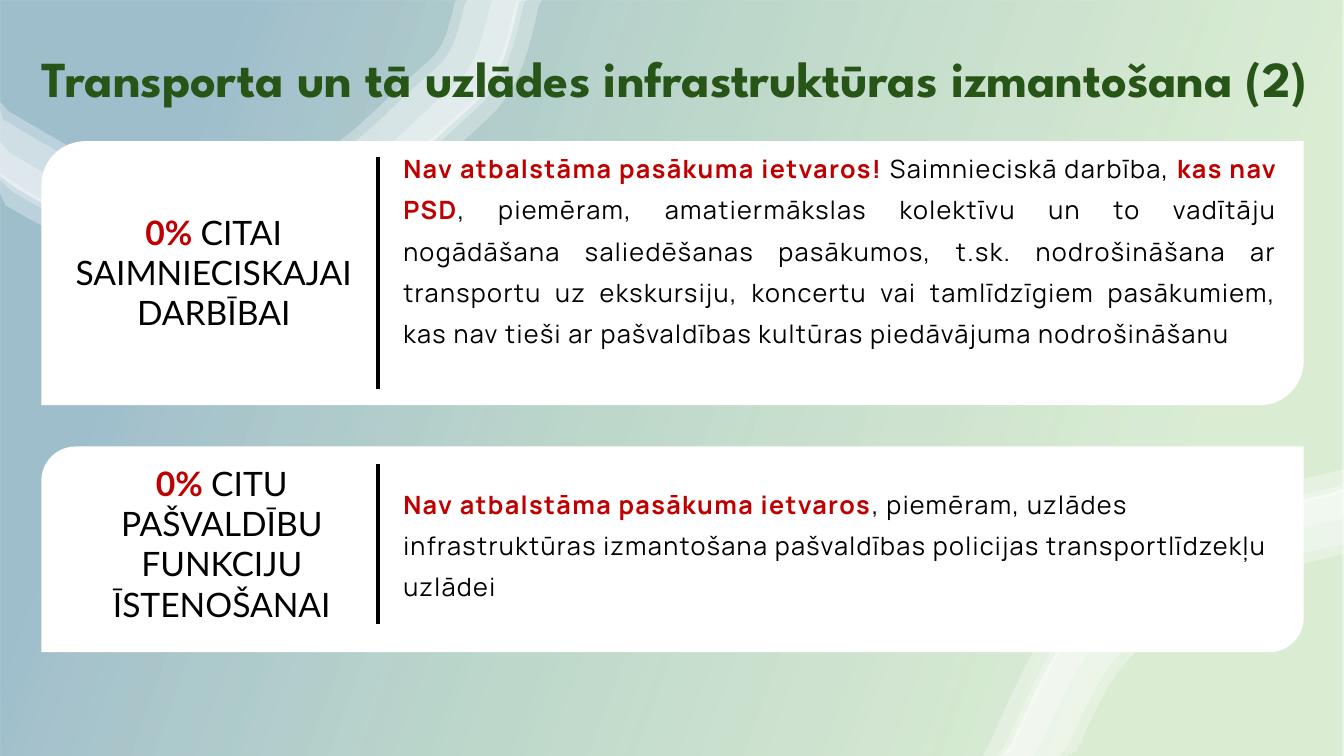
import math
from dataclasses import dataclass

from lxml import etree
from pptx import Presentation
from pptx import util as u
from pptx.dml.color import RGBColor
from pptx.enum import shapes, text
from pptx.oxml import ns

WIDTH, HEIGHT = 13.33, 7.5


@dataclass(frozen=True)
class Theme:
    green: str = "4EA72E"
    blue: str = "156082"
    white: str = "FFFFFF"
    black: str = "000000"
    red: str = "C00000"
    title_green: str = "275417"
    title_font: str = "League Spartan"
    label_font: str = "Lato"
    body_font: str = "Manrope"
    title_size: int = 36
    label_size: int = 24
    body_size: int = 18
    rule_width: int = 3
    ribbon_alpha: int = 30


TOP_CURVE = [(5.22, -0.3), (4.95, 0.69), (4.45, 1.26), (3.37, 2.12),
             (1.87, 2.44), (0.93, 2.27), (-0.5, 1.48)]
CORNER_CURVE = [(9.8, 7.9), (10.52, 6.4), (11.26, 5.69), (12.19, 5.16), (13.7, 4.78)]
BANDS = [(0.2, -0.03), (0.05, -0.27), (0, -0.52), (0, -0.62)]


def smooth(knots, steps=8):
    padded = [knots[0], *knots, knots[-1]]
    points = []
    for a, b, c, d in zip(padded, padded[1:], padded[2:], padded[3:]):
        for i in range(steps):
            t = i / steps
            points.append(tuple(
                q + t * (r - p) / 2 + t**2 * (p - 2.5 * q + 2 * r - s / 2)
                + t**3 * (1.5 * (q - r) + (s - p) / 2)
                for p, q, r, s in zip(a, b, c, d)))
    return points + [knots[-1]]


def offset(curve, distance):
    edge = []
    for i, (x, y) in enumerate(curve):
        before, after = curve[max(i - 1, 0)], curve[min(i + 1, len(curve) - 1)]
        dx, dy = after[0] - before[0], after[1] - before[1]
        reach = distance / math.hypot(dx, dy)
        edge.append((min(max(x + dy * reach, 0), WIDTH), min(max(y - dx * reach, 0), HEIGHT)))
    return edge


def add_run(p, content, *, font, size, color, bold=False, spacing=0):
    r = p.add_run()
    r.text = content
    r.font.name = font
    r.font.size = u.Pt(size)
    r.font.bold = bold
    r.font.color.rgb = RGBColor.from_string(color)
    if spacing:
        r.font._element.set("spc", str(spacing * 100))


def set_alpha(color_element, percent):
    etree.SubElement(color_element, ns.qn("a:alpha")).set("val", str(percent * 1000))


class SlideBuilder:
    def __init__(self, prs, theme):
        self.theme = theme
        self.slide = prs.slides.add_slide(prs.slide_layouts[6])

    def finish(self, sp, alpha=100):
        sp.shadow.inherit = False
        sp.line.fill.background()
        sp.fill.solid()
        sp.fill.fore_color.rgb = RGBColor.from_string(self.theme.white)
        if alpha < 100:
            set_alpha(sp.element.spPr.find(".//" + ns.qn("a:srgbClr")), alpha)

    def panel(self, kind, *box):
        sp = self.slide.shapes.add_shape(kind, *map(u.Inches, box))
        self.finish(sp)
        return sp

    def backdrop(self):
        sp = self.panel(shapes.MSO_SHAPE.RECTANGLE, 0, 0, WIDTH, HEIGHT)
        sp.fill.gradient()
        sp.fill.gradient_angle = 160
        stops = [(0.16, self.theme.green), (0.85, self.theme.blue)]
        for stop, (position, color) in zip(sp.fill.gradient_stops, stops):
            stop.position = position
            stop.color.rgb = RGBColor.from_string(color)
        for element, alpha in zip(sp.element.spPr.iter(ns.qn("a:srgbClr")), (20, 40)):
            set_alpha(element, alpha)

    def ribbon(self, curve, outer, inner):
        outline = offset(curve, outer) + offset(curve, inner)[::-1]
        points = [(u.Inches(x), u.Inches(y)) for x, y in outline]
        builder = self.slide.shapes.build_freeform(*points[0])
        builder.add_line_segments(points[1:], close=True)
        self.finish(builder.convert_to_shape(), self.theme.ribbon_alpha)

    def rule(self, x, top, bottom):
        ln = self.slide.shapes.add_connector(
            shapes.MSO_CONNECTOR.STRAIGHT, *map(u.Inches, (x, bottom, x, top)))
        ln.line.width = u.Pt(self.theme.rule_width)
        ln.line.color.rgb = RGBColor.from_string(self.theme.black)
        etree.SubElement(ln.element.spPr, ns.qn("a:effectLst"))

    def textbox(self, box, runs, align=text.PP_ALIGN.LEFT, leading=None, inset=True, **style):
        tf = self.slide.shapes.add_textbox(*map(u.Inches, box)).text_frame
        tf.word_wrap = True
        tf.auto_size = text.MSO_AUTO_SIZE.SHAPE_TO_FIT_TEXT
        if not inset:
            tf.margin_left = tf.margin_top = tf.margin_right = tf.margin_bottom = 0
        p = tf.paragraphs[0]
        p.alignment = align
        if leading:
            p.line_spacing = u.Pt(leading)
        for content, color in runs:
            add_run(p, content, color=color, bold=color != self.theme.black, **style)

    def title(self, box, content):
        self.textbox(box, [(content, self.theme.title_green)], leading=60.2, inset=False,
                     font=self.theme.title_font, size=self.theme.title_size)

    def label(self, box, content):
        self.textbox(box, [("0% ", self.theme.red), (content, self.theme.black)],
                     text.PP_ALIGN.CENTER, font=self.theme.label_font, size=self.theme.label_size)

    def body(self, box, runs, align):
        self.textbox(box, runs, align, leading=29.5, inset=False, spacing=1,
                     font=self.theme.body_font, size=self.theme.body_size)


def main():
    prs = Presentation()
    prs.slide_width, prs.slide_height = u.Inches(WIDTH), u.Inches(HEIGHT)
    theme = Theme()
    s = SlideBuilder(prs, theme)
    s.backdrop()
    for knots in (TOP_CURVE, CORNER_CURVE):
        for outer, inner in BANDS:
            s.ribbon(smooth(knots), outer, inner)

    cards = [
        (1.4, 2.62, (1.56, 3.86), (0.45, 2.05, 3.34, 1.31), "CITAI SAIMNIECISKAJAI DARBĪBAI",
         (4, 1.41, 8.67, 2.41), text.PP_ALIGN.JUSTIFY,
         [("Nav atbalstāma pasākuma ietvaros! ", theme.red),
          ("Saimnieciskā darbība, ", theme.black),
          ("kas nav PSD", theme.red),
          (", piemēram, amatiermākslas kolektīvu un to vadītāju nogādāšana saliedēšanas "
           "pasākumos, t.sk. nodrošināšana ar transportu uz ekskursiju, koncertu vai "
           "tamlīdzīgiem pasākumiem, kas nav tieši ar pašvaldības kultūras piedāvājuma "
           "nodrošināšanu", theme.black)]),
        (4.43, 2.04, (4.6, 6.19), (0.53, 4.54, 3.34, 1.72), "CITU PAŠVALDĪBU FUNKCIJU ĪSTENOŠANAI",
         (4, 4.74, 8.67, 1.19), text.PP_ALIGN.LEFT,
         [("Nav atbalstāma pasākuma ietvaros", theme.red),
          (", piemēram, uzlādes infrastruktūras izmantošana pašvaldības policijas "
           "transportlīdzekļu uzlādei", theme.black)]),
    ]
    for top, height, rule_span, label_box, label, body_box, align, runs in cards:
        s.panel(shapes.MSO_SHAPE.ROUND_2_DIAG_RECTANGLE, 0.41, top, 12.52, height)
        s.body(body_box, runs, align)
        s.label(label_box, label)
        s.rule(3.75, *rule_span)

    s.title((0.41, 0.23, 12.73, 0.76), "Transporta un tā uzlādes infrastruktūras izmantošana (2)")
    prs.save("out.pptx")


if __name__ == "__main__":
    main()
